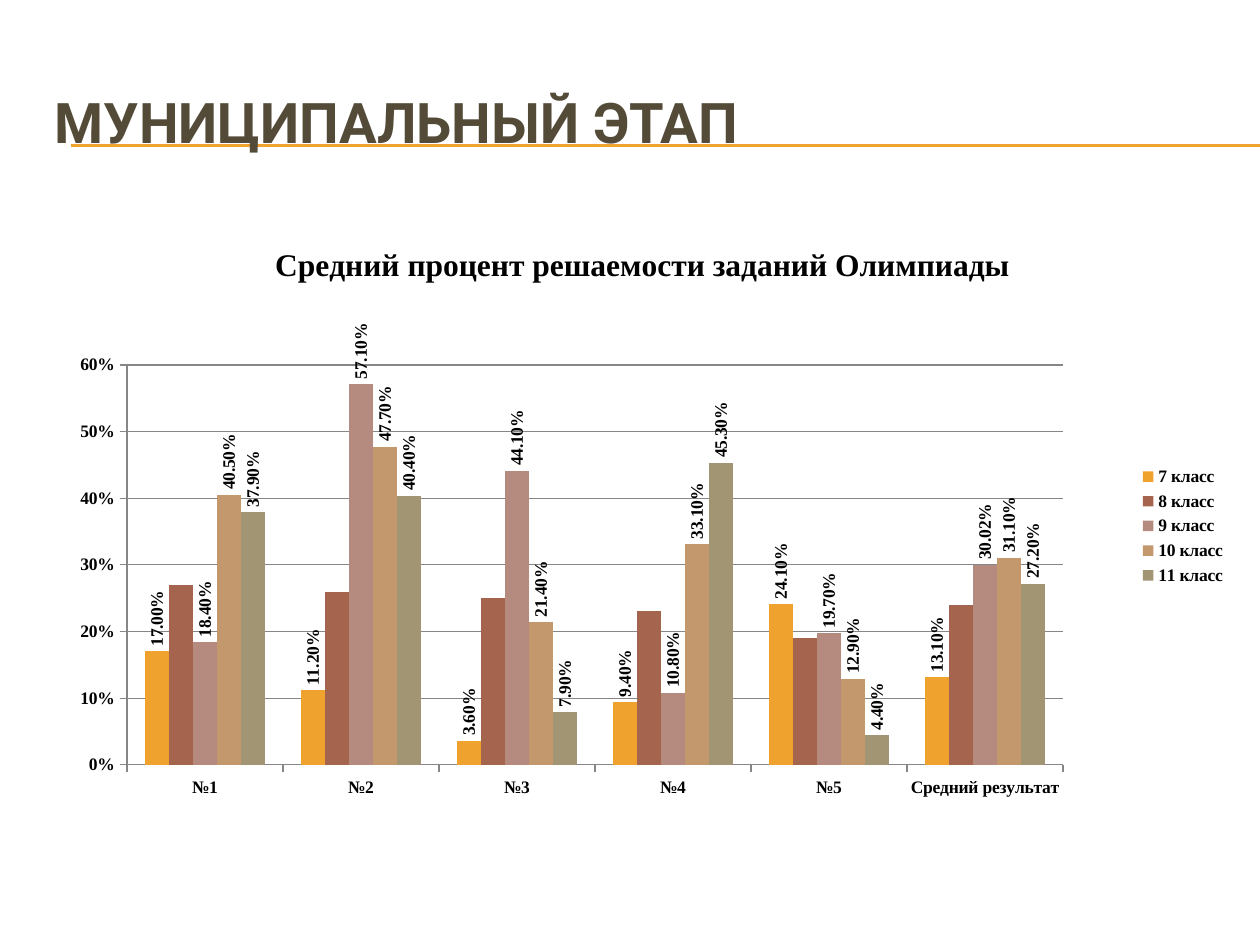
from dataclasses import dataclass

from lxml import etree
from pptx import Presentation
from pptx import util as u
from pptx.chart.data import CategoryChartData
from pptx.dml.color import RGBColor
from pptx.enum import chart as ch, shapes, text
from pptx.oxml import parse_xml
from pptx.oxml.ns import nsdecls, qn

PX_PER_INCH = 126
CHART_FONT = "Times New Roman"
GRID_COLOR = "868686"
CATEGORIES = ["№1", "№2", "№3", "№4", "№5", "Средний результат"]


@dataclass
class Grade:
    name: str
    color: str
    values: tuple
    labelled: bool = True


GRADES = [
    Grade("7 класс", "F0A22E", (0.17, 0.112, 0.036, 0.094, 0.241, 0.131)),
    Grade("8 класс", "A5644E", (0.27, 0.26, 0.25, 0.23, 0.19, 0.24), labelled=False),
    Grade("9 класс", "B58B80", (0.184, 0.571, 0.441, 0.108, 0.197, 0.3002)),
    Grade("10 класс", "C3986D", (0.405, 0.477, 0.214, 0.331, 0.129, 0.311)),
    Grade("11 класс", "A19574", (0.379, 0.404, 0.079, 0.453, 0.044, 0.272)),
]


def px(length: int) -> u.Emu:
    return u.Emu(round(length * 914400 / PX_PER_INCH))


def rgb(color: str) -> RGBColor:
    return RGBColor.from_string(color)


def style_font(font, name: str, size: int, color: str) -> None:
    font.name = name
    font.size = u.Pt(size)
    font.bold = True
    font.color.rgb = rgb(color)


def add_rule(page, left: int, right: int, top: int) -> None:
    rule = page.shapes.add_connector(
        shapes.MSO_CONNECTOR.STRAIGHT, px(left), px(top), px(right), px(top))
    rule.line.color.rgb = rgb("F0A22E")
    rule.line.width = u.Pt(0.75)
    etree.SubElement(rule._element.spPr, qn("a:effectLst"))


def set_title(page, words: str) -> None:
    title = page.shapes.title
    title.left, title.top, title.width, title.height = map(px, (42, 63, 1197, 116))
    frame = title.text_frame
    frame.word_wrap = True
    frame.auto_size = text.MSO_AUTO_SIZE.NONE
    frame.vertical_anchor = text.MSO_ANCHOR.MIDDLE
    para = frame.paragraphs[0]
    para.alignment = text.PP_ALIGN.LEFT
    span = para.add_run()
    span.text = words
    style_font(span.font, "Roboto", 32, "534B38")


def manual_layout(**settings):
    """Build a chart layout; the settings keep the order the schema asks for."""
    parts = "".join(f'<c:{key} val="{value}"/>' for key, value in settings.items())
    return parse_xml(f'<c:layout {nsdecls("c")}><c:manualLayout>{parts}'
                     '</c:manualLayout></c:layout>')


def set_chart_title(chart, words: str) -> None:
    title = chart.chart_title
    span = title.text_frame.paragraphs[0].add_run()
    span.text = words
    style_font(span.font, CHART_FONT, 18, "000000")
    title.include_in_layout = False
    element = title._element
    for old in element.findall(qn("c:layout")):
        element.remove(old)
    element.find(qn("c:tx")).addnext(
        manual_layout(xMode="edge", yMode="edge", x=0.19, y=0.04))


def set_plot_area(chart) -> None:
    area = chart._chartSpace.chart.plotArea
    for old in area.findall(qn("c:layout")):
        area.remove(old)
    area.insert(0, manual_layout(layoutTarget="inner", xMode="edge", yMode="edge",
                                 x=0.071, y=0.242, w=0.782, h=0.641))


def style_axes(chart) -> None:
    for axis in (chart.category_axis, chart.value_axis):
        axis.format.line.color.rgb = rgb(GRID_COLOR)
        axis.format.line.width = u.Pt(0.75)
        axis.major_tick_mark = ch.XL_TICK_MARK.OUTSIDE
    values = chart.value_axis
    values.minimum_scale, values.maximum_scale, values.major_unit = 0, 0.6, 0.1
    values.tick_labels.number_format = "0%"
    values.tick_labels.number_format_is_linked = False
    values.has_major_gridlines = True
    values.major_gridlines.format.line.color.rgb = rgb(GRID_COLOR)
    values.major_gridlines.format.line.width = u.Pt(0.75)


def style_series(series, grade: Grade) -> None:
    series.format.fill.solid()
    series.format.fill.fore_color.rgb = rgb(grade.color)
    series.invert_if_negative = False
    if grade.labelled:
        labels = series.data_labels
        labels.show_value = True
        labels.position = ch.XL_LABEL_POSITION.OUTSIDE_END
        labels.number_format = "0.00%"
        labels.number_format_is_linked = False
        style_font(labels.font, CHART_FONT, 10, "000000")
        body = labels._element.find(qn("c:txPr")).find(qn("a:bodyPr"))
        body.set("rot", "-5400000")
        body.set("vert", "horz")


def add_results_chart(page) -> None:
    data = CategoryChartData(number_format="0.00%")
    data.categories = CATEGORIES
    for grade in GRADES:
        data.add_series(grade.name, grade.values)
    chart = page.shapes.add_chart(
        ch.XL_CHART_TYPE.COLUMN_CLUSTERED, *map(px, (42, 214, 1197, 624)), data).chart
    style_font(chart.font, CHART_FONT, 10, "000000")
    set_chart_title(chart, "Средний процент решаемости заданий Олимпиады")
    set_plot_area(chart)
    style_axes(chart)
    chart.has_legend = True
    chart.legend.position = ch.XL_LEGEND_POSITION.RIGHT
    chart.legend.include_in_layout = False
    plot = chart.plots[0]
    plot.vary_by_categories = False
    plot.gap_width, plot.overlap = 150, 0
    for series, grade in zip(plot.series, GRADES):
        style_series(series, grade)


def main() -> None:
    deck = Presentation()
    deck.slide_width, deck.slide_height = px(1260), px(945)
    page = deck.slides.add_slide(deck.slide_layouts[5])
    for top in (145, 146):
        add_rule(page, 71, 1260, top)
    set_title(page, "МУНИЦИПАЛЬНЫЙ ЭТАП")
    title = page.shapes.title._element
    title.getparent().append(title)  # bring the title in front of the rules
    add_results_chart(page)
    deck.save("out.pptx")


if __name__ == "__main__":
    main()
